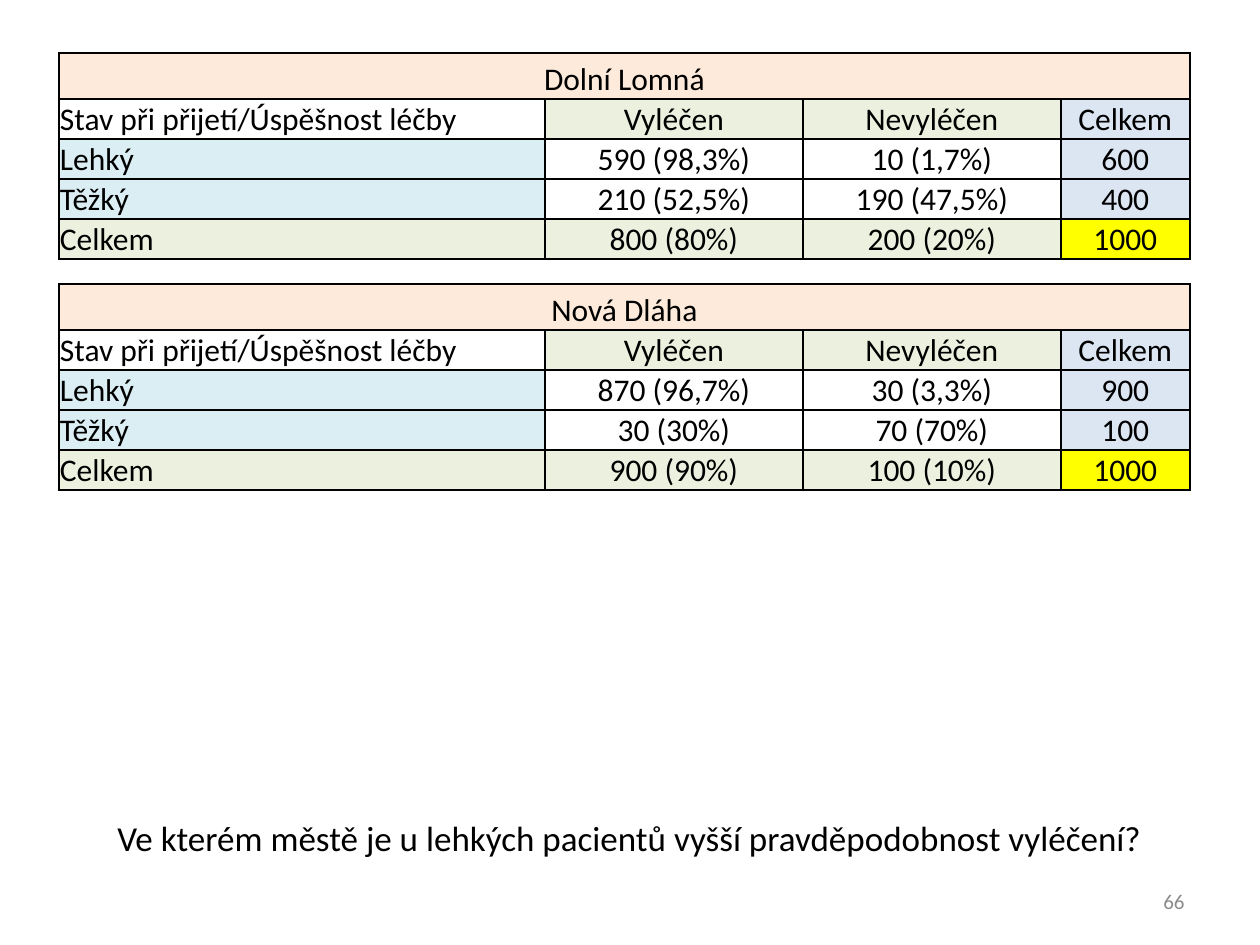
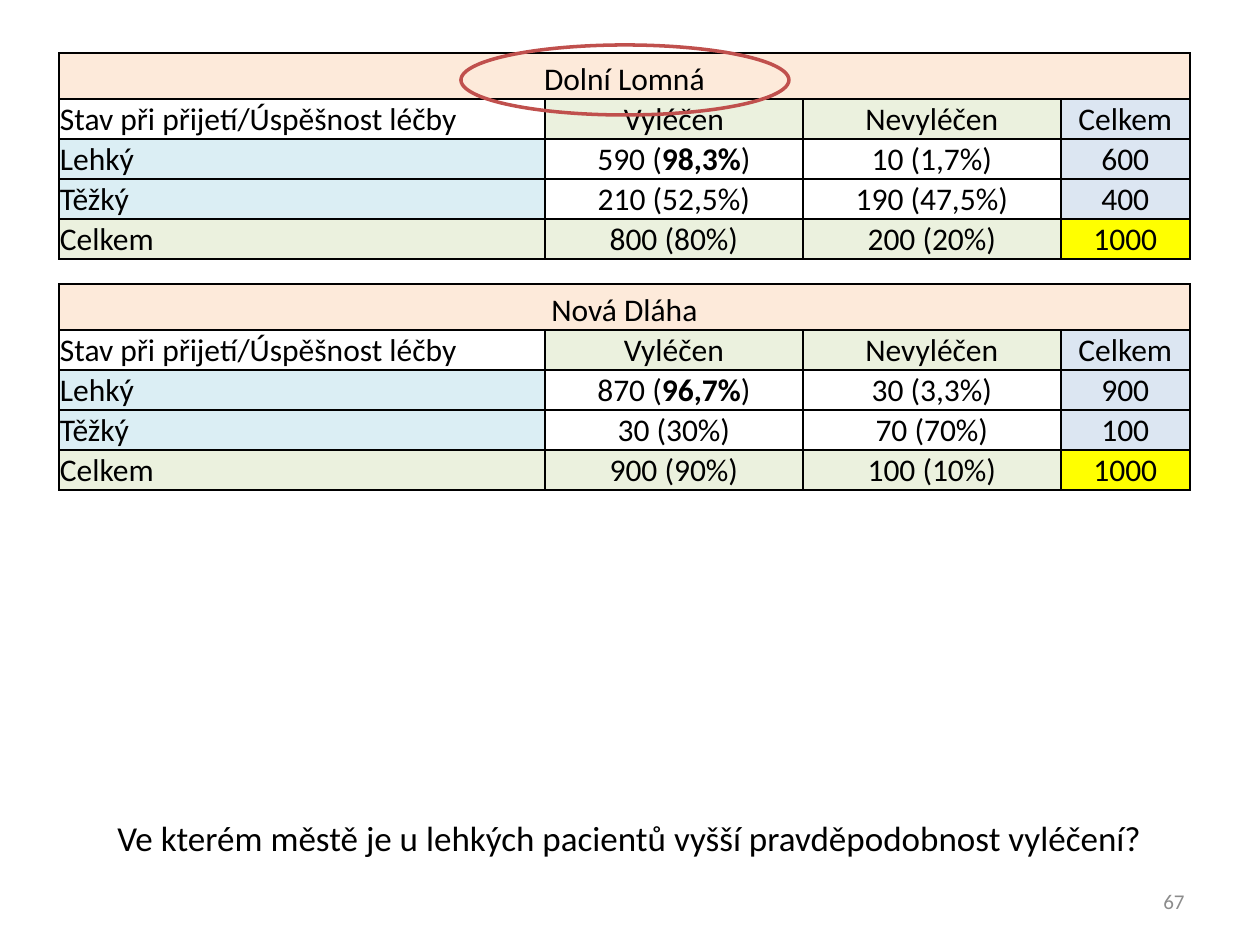
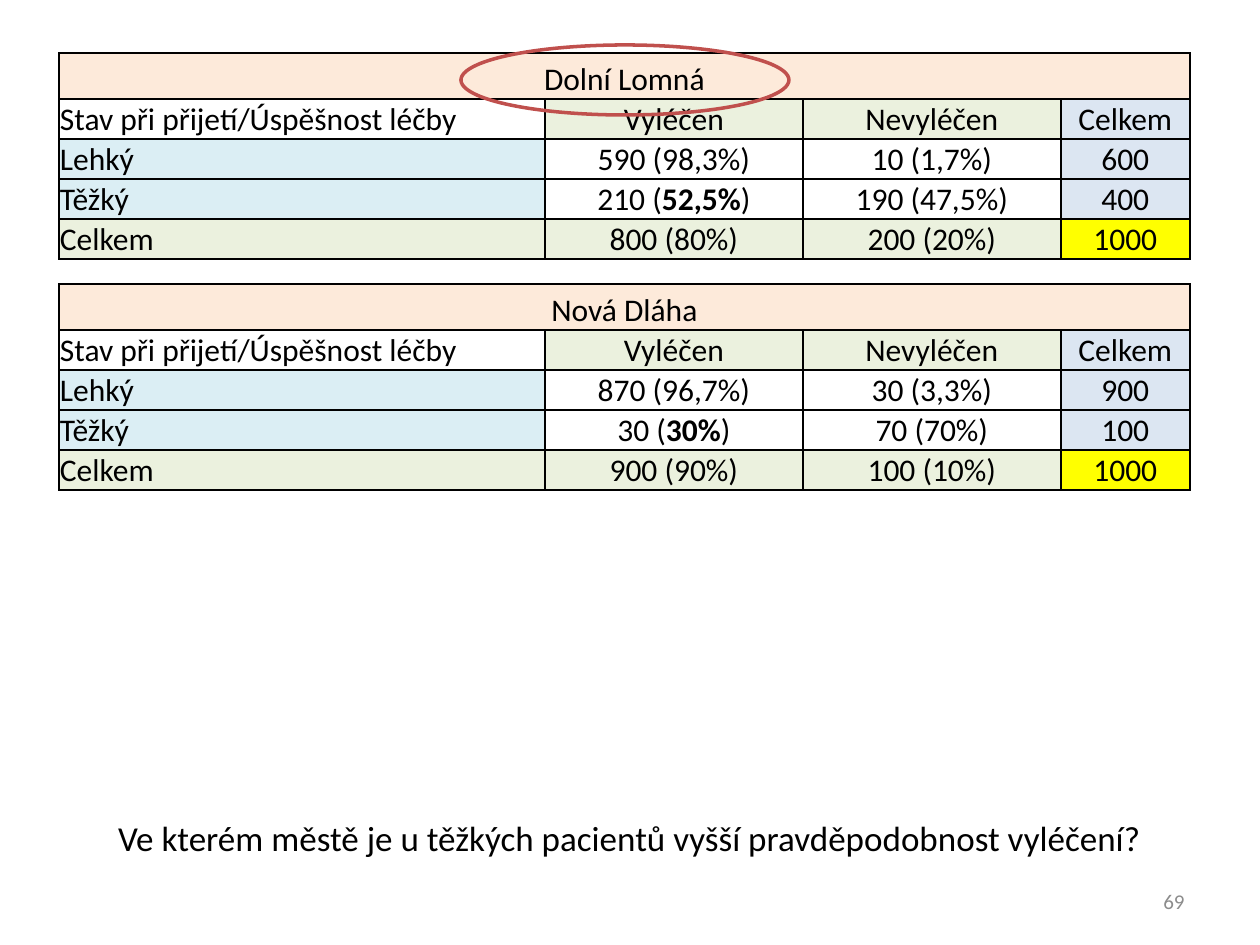
from dataclasses import dataclass

from lxml import etree
from pptx import Presentation
from pptx.dml.color import RGBColor
from pptx.enum.shapes import MSO_SHAPE
from pptx.enum.text import MSO_ANCHOR, PP_ALIGN
from pptx.oxml.ns import qn
from pptx.util import Pt

EMU_PER_PX = 914400 // 126
ELLIPSE = MSO_SHAPE.OVAL
TOP, MIDDLE, BOTTOM = MSO_ANCHOR.TOP, MSO_ANCHOR.MIDDLE, MSO_ANCHOR.BOTTOM
LEFT, CENTER, RIGHT = PP_ALIGN.LEFT, PP_ALIGN.CENTER, PP_ALIGN.RIGHT


@dataclass(frozen=True)
class Theme:
    """Colours, type sizes and line widths shared by the slides."""

    font: str = "Calibri"
    text: str = "000000"
    muted: str = "8C8C8C"
    accent: str = "C0504D"
    town: str = "FDEADA"
    outcome: str = "EBF1DE"
    condition: str = "DBEEF4"
    total: str = "DCE6F2"
    grand_total: str = "FFFF00"
    table_size: int = 18
    question_size: int = 20
    number_size: int = 12
    border_width: int = 1
    ring_width: int = 2


THEME = Theme()
TABLE_LEFT = 59
COLUMN_WIDTHS = (486, 258, 258, 129)
TOWN_ROW_HEIGHT = 46
ROW_HEIGHT = 40
HEADINGS = ("Stav při přijetí/Úspěšnost léčby", "Vyléčen", "Nevyléčen", "Celkem")
ROW_FILLS = (
    (THEME.town,) * 4,
    (None, THEME.outcome, THEME.outcome, THEME.total),
    (THEME.condition, None, None, THEME.total),
    (THEME.condition, None, None, THEME.total),
    (THEME.outcome, THEME.outcome, THEME.outcome, THEME.grand_total),
)
TOWNS = (
    ("Dolní Lomná", 53, (
        ("Lehký", "590 (98,3%)", "10 (1,7%)", "600"),
        ("Těžký", "210 (52,5%)", "190 (47,5%)", "400"),
        ("Celkem", "800 (80%)", "200 (20%)", "1000"),
    )),
    ("Nová Dláha", 284, (
        ("Lehký", "870 (96,7%)", "30 (3,3%)", "900"),
        ("Těžký", "30 (30%)", "70 (70%)", "100"),
        ("Celkem", "900 (90%)", "100 (10%)", "1000"),
    )),
)
SLIDES = (
    (66, "lehkých", None, False),
    (67, "lehkých", "Lehký", True),
    (69, "těžkých", "Těžký", True),
)


def px(length):
    """Convert whole pixels to EMU."""
    return length * EMU_PER_PX


def format_paragraph(paragraph, size, color, alignment):
    """Apply alignment and the theme font to a paragraph's runs."""
    paragraph.alignment = alignment
    for run in paragraph.runs:
        run.font.name = THEME.font
        run.font.size = Pt(size)
        run.font.color.rgb = RGBColor.from_string(color)


def add_borders(cell):
    """Draw a solid line on all four sides of a cell."""
    properties = cell._tc.get_or_add_tcPr()
    for side in ("lnL", "lnR", "lnT", "lnB"):
        line = etree.SubElement(properties, qn(f"a:{side}"), w=str(Pt(THEME.border_width)))
        fill = etree.SubElement(line, qn("a:solidFill"))
        etree.SubElement(fill, qn("a:srgbClr"), val=THEME.text)


def emphasize_percentage(paragraph):
    """Make the percentage inside the brackets bold."""
    count, percentage = paragraph.text.rstrip(")").split("(")
    paragraph.text = f"{count}("
    bold_run = paragraph.add_run()
    bold_run.text = percentage
    bold_run.font.bold = True
    paragraph.add_run().text = ")"


def fill_cell(cell, text, fill, alignment, anchor, emphasized):
    """Set the text, borders and fill of one cell."""
    add_borders(cell)
    if fill:
        cell.fill.solid()
        cell.fill.fore_color.rgb = RGBColor.from_string(fill)
    else:
        cell.fill.background()
    cell.margin_left = cell.margin_right = cell.margin_top = px(1)
    cell.margin_bottom = 0
    cell.vertical_anchor = anchor
    paragraph = cell.text_frame.paragraphs[0]
    paragraph.text = text
    if emphasized:
        emphasize_percentage(paragraph)
    format_paragraph(paragraph, THEME.table_size, THEME.text, alignment)


def add_town_table(slide, town, top, results, emphasized_condition):
    """Add the table of treatment results for one town."""
    rows = ((town, "", "", ""), HEADINGS, *results)
    height = TOWN_ROW_HEIGHT + ROW_HEIGHT * (len(rows) - 1)
    table = slide.shapes.add_table(
        len(rows), len(HEADINGS), px(TABLE_LEFT), px(top), px(sum(COLUMN_WIDTHS)), px(height)
    ).table
    table.first_row = table.horz_banding = False
    for column, width in zip(table.columns, COLUMN_WIDTHS):
        column.width = px(width)
    for row_index, (values, fills) in enumerate(zip(rows, ROW_FILLS)):
        is_town = row_index == 0
        table.rows[row_index].height = px(TOWN_ROW_HEIGHT if is_town else ROW_HEIGHT)
        for column_index, (value, fill) in enumerate(zip(values, fills)):
            is_label = column_index == 0
            alignment = LEFT if is_label and not is_town else CENTER
            anchor = BOTTOM if is_label else MIDDLE
            emphasized = column_index == 1 and values[0] == emphasized_condition
            fill_cell(table.cell(row_index, column_index), value, fill,
                      alignment, anchor, emphasized)
    table.cell(0, 0).merge(table.cell(0, len(HEADINGS) - 1))
    table.cell(0, 0).text_frame.paragraphs[0].line_spacing = 1.15


def set_question(slide, patients):
    """Put the question in the title placeholder below the tables."""
    title = slide.shapes.title
    title.left, title.top, title.width, title.height = px(64), px(810), px(1131), px(55)
    frame = title.text_frame
    frame.text = f"Ve kterém městě je u {patients} pacientů vyšší pravděpodobnost vyléčení?"
    frame.vertical_anchor = TOP
    format_paragraph(frame.paragraphs[0], THEME.question_size, THEME.text, CENTER)


def add_answer_ring(slide):
    """Circle the name of the first town."""
    ring = slide.shapes.add_shape(ELLIPSE, px(461), px(45), px(328), px(70))
    ring.shadow.inherit = False
    ring.fill.background()
    ring.line.color.rgb = RGBColor.from_string(THEME.accent)
    ring.line.width = Pt(THEME.ring_width)


def add_slide_number(slide, number):
    """Add the slide number at the bottom right."""
    frame = slide.shapes.add_textbox(px(903), px(876), px(294), px(50)).text_frame
    frame.word_wrap = True
    frame.vertical_anchor = MIDDLE
    frame.text = str(number)
    format_paragraph(frame.paragraphs[0], THEME.number_size, THEME.muted, RIGHT)


def main():
    """Build the slides and save the presentation."""
    presentation = Presentation()
    presentation.slide_width, presentation.slide_height = px(1260), px(945)
    title_only = presentation.slide_layouts.get_by_name("Title Only")
    for number, patients, emphasized_condition, is_answered in SLIDES:
        slide = presentation.slides.add_slide(title_only)
        for town, top, results in TOWNS:
            add_town_table(slide, town, top, results, emphasized_condition)
        set_question(slide, patients)
        if is_answered:
            add_answer_ring(slide)
        add_slide_number(slide, number)
    presentation.save("out.pptx")


if __name__ == "__main__":
    main()
